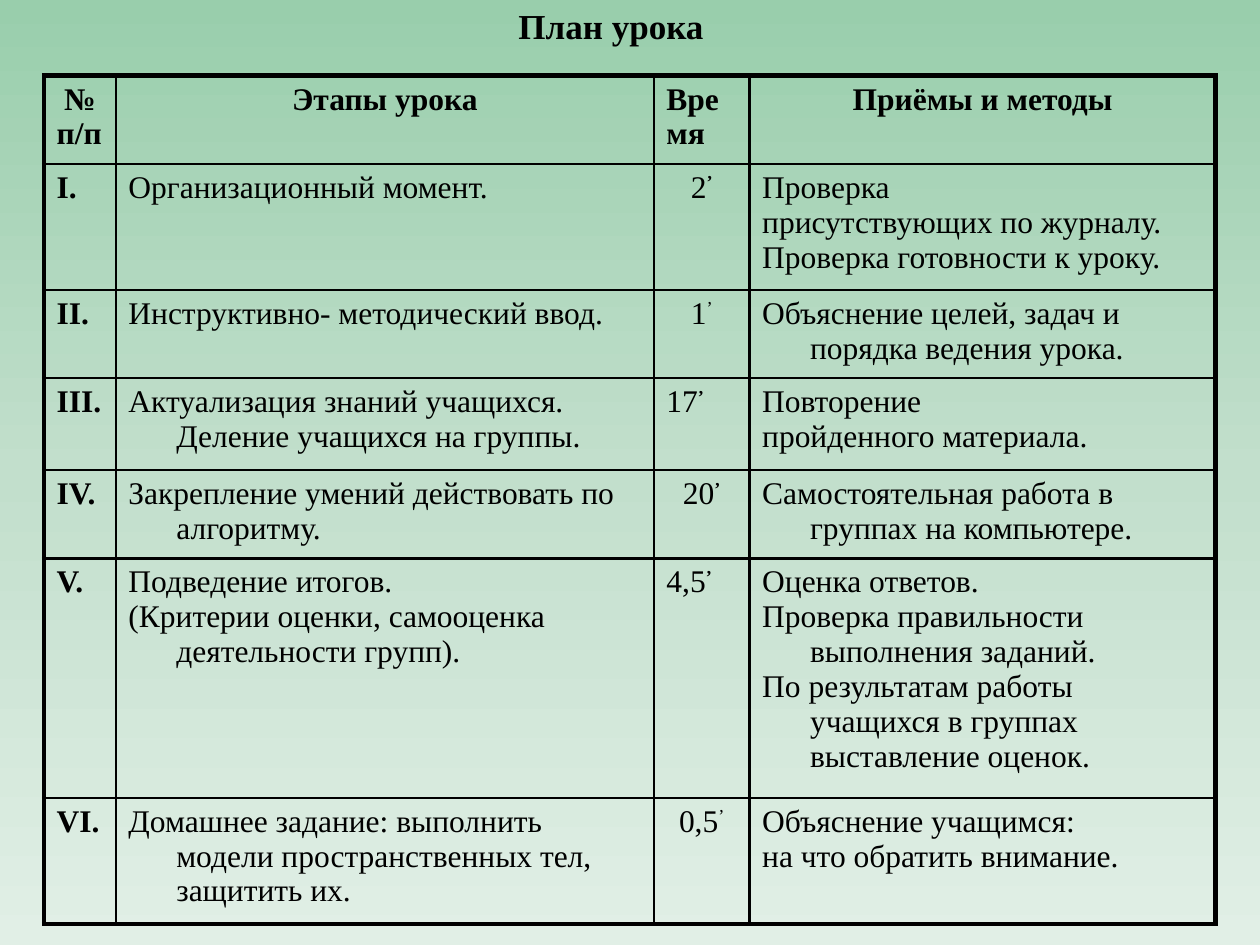
from copy import deepcopy
from dataclasses import dataclass

from lxml.etree import SubElement
from pptx import Presentation
from pptx.dml.color import RGBColor
from pptx.enum.text import MSO_ANCHOR, PP_ALIGN
from pptx.oxml.ns import qn
from pptx.util import Inches, Pt

BLACK = RGBColor(0x00, 0x00, 0x00)
SHADES = (RGBColor(0x99, 0xCE, 0xAC), RGBColor(0xC2, 0xDF, 0xCC),
          RGBColor(0xE1, 0xEF, 0xE6))
FACE = "Times New Roman"
THIN, THICK = 1.5, 3
LEFT, CENTER = PP_ALIGN.LEFT, PP_ALIGN.CENTER
INDENT = Inches(0.38)
WIDTHS = (0.57, 4.27, 0.76, 3.7)
HEIGHTS = (0.63, 0.99, 0.69, 0.73, 0.69, 1.58, 0.69)


@dataclass
class Step:
    number: str
    stage: list[str]
    time: str
    methods: list[str]
    align: PP_ALIGN = CENTER
    bold_mark: bool = True


STEPS = [
    Step("I.", ["Организационный момент."], "2",
         ["Проверка", "присутствующих по журналу.",
          "Проверка готовности к уроку."]),
    Step("II.", ["Инструктивно- методический ввод."], "1",
         ["Объяснение целей, задач и порядка ведения урока."],
         bold_mark=False),
    Step("III.", ["Актуализация знаний учащихся. Деление учащихся на группы."],
         "17", ["Повторение", "пройденного материала."], align=LEFT),
    Step("IV.", ["Закрепление умений действовать по алгоритму."], "20",
         ["Самостоятельная работа в группах на компьютере."]),
    Step("V.", ["Подведение итогов.",
                "(Критерии оценки, самооценка деятельности групп)."], "4,5",
         ["Оценка ответов.", "Проверка правильности выполнения заданий.",
          "По результатам работы учащихся в группах выставление оценок."],
         align=LEFT),
    Step("VI.", ["Домашнее задание: выполнить модели пространственных тел, "
                 "защитить их."], "0,5",
         ["Объяснение учащимся:", "на что обратить внимание."],
         bold_mark=False),
]


def add_run(para, text: str, size: float, bold: bool):
    run = para.add_run()
    run.text = text
    for key, value in {"name": FACE, "size": Pt(size), "bold": bold}.items():
        setattr(run.font, key, value)
    run.font.color.rgb = BLACK
    return run


def write(cell, lines: list[str], bold: bool = False,
          aligns: tuple = (LEFT,)) -> None:
    """Write one hanging paragraph a line; the last alignment carries on."""
    frame = cell.text_frame
    for i, line in enumerate(lines):
        para = frame.paragraphs[0] if i == 0 else frame.add_paragraph()
        para.alignment = aligns[min(i, len(aligns) - 1)]
        props = para._p.get_or_add_pPr()
        props.set("marL", str(INDENT))
        props.set("indent", str(-INDENT))
        add_run(para, line, 18, bold)


def add_mark(cell, bold: bool) -> None:
    mark = add_run(cell.text_frame.paragraphs[0], "’", 18, bold)
    mark.font._element.set("baseline", "30000")


def set_edge(cell, side: str, width: float) -> None:
    line = SubElement(cell._tc.get_or_add_tcPr(), qn(f"a:ln{side}"),
                      w=str(Pt(width)))
    fill = SubElement(line, qn("a:solidFill"))
    SubElement(fill, qn("a:srgbClr"), val=str(BLACK))


def paint(slide) -> None:
    fill = slide.background.fill
    fill.gradient()
    fill.gradient_angle = 270
    first = next(slide._element.iter(qn("a:gs")))
    first.addnext(deepcopy(first))
    for i, (stop, shade) in enumerate(zip(fill.gradient_stops, SHADES)):
        stop.color.rgb = shade
        stop.position = i / 2


def add_title(slide) -> None:
    box = slide.shapes.add_textbox(Inches(0.35), 0, Inches(9), Inches(0.4))
    frame = box.text_frame
    frame.word_wrap = True
    frame.vertical_anchor = MSO_ANCHOR.MIDDLE
    para = frame.paragraphs[0]
    para.alignment = CENTER
    add_run(para, "План урока", 20, True)


def add_plan(slide) -> None:
    rows, cols = len(HEIGHTS), len(WIDTHS)
    shape = slide.shapes.add_table(rows, cols, Inches(0.35), Inches(0.6),
                                   Inches(9.29), Inches(6.73))
    table = shape.table
    table.first_row = table.horz_banding = False
    for col, width in zip(table.columns, WIDTHS):
        col.width = Inches(width)
    for row, height in zip(table.rows, HEIGHTS):
        row.height = Inches(height)
    shape.height = Inches(6.73)

    # Thick outer frame, thin inner grid
    for r in range(rows):
        for c in range(cols):
            cell = table.cell(r, c)
            outer = {"L": c == 0, "R": c == cols - 1,
                     "T": r == 0, "B": r == rows - 1}
            for side, thick in outer.items():
                set_edge(cell, side, THICK if thick else THIN)
            cell.fill.background()

    # Header
    heads = ((["№", "п/п"], (CENTER, LEFT)), (["Этапы урока"], (CENTER,)),
             (["Вре", "мя"], (LEFT,)), (["Приёмы и методы"], (CENTER,)))
    for c, (lines, aligns) in enumerate(heads):
        write(table.cell(0, c), lines, True, aligns)

    # Lesson steps
    for r, step in enumerate(STEPS, 1):
        number, stage, time, methods = (table.cell(r, c) for c in range(cols))
        write(number, [step.number], True)
        write(stage, step.stage)
        write(time, [step.time], aligns=(step.align,))
        add_mark(time, step.bold_mark)
        write(methods, step.methods)


def main() -> None:
    deck = Presentation()
    deck.slide_width, deck.slide_height = Inches(10), Inches(7.5)
    slide = deck.slides.add_slide(deck.slide_layouts[6])
    paint(slide)
    add_title(slide)
    add_plan(slide)
    deck.save("out.pptx")


if __name__ == "__main__":
    main()
